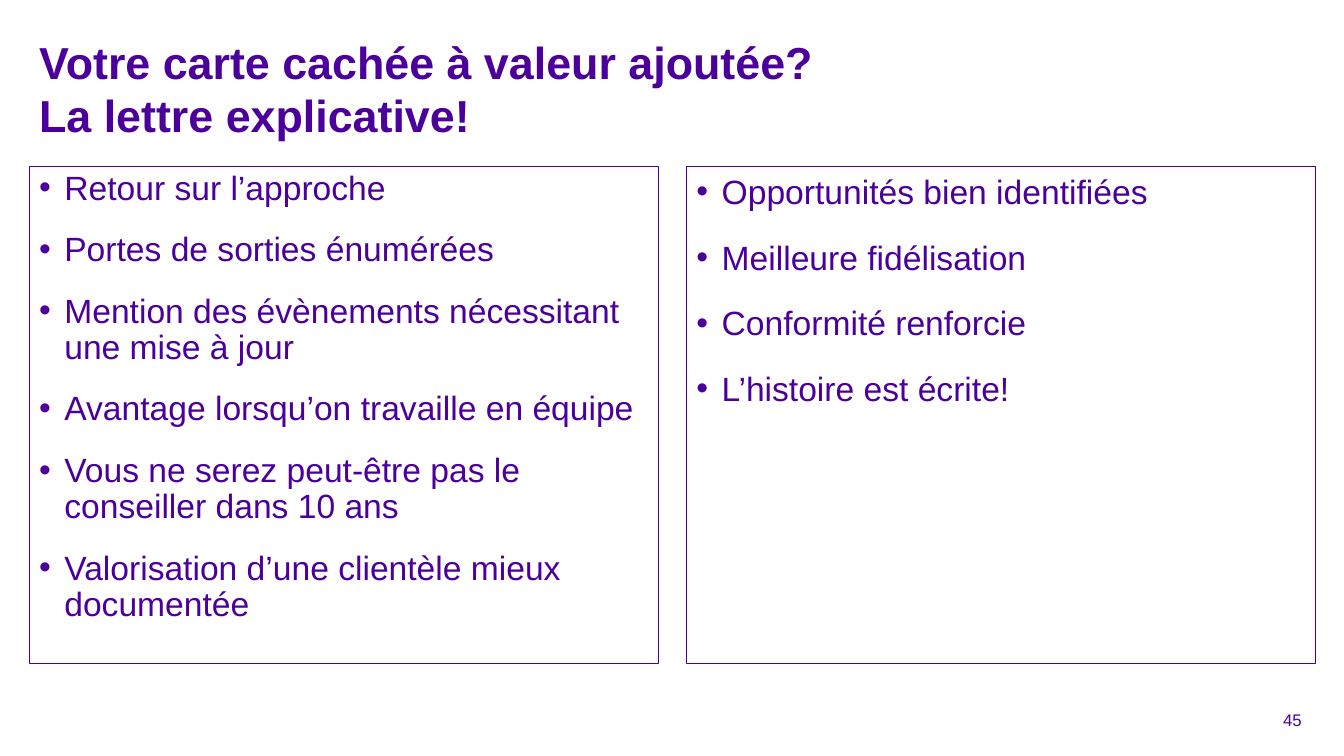
from dataclasses import dataclass

from lxml import etree
from pptx import Presentation
from pptx.dml.color import RGBColor
from pptx.enum.shapes import MSO_SHAPE
from pptx.enum.text import MSO_ANCHOR, PP_ALIGN
from pptx.oxml.ns import qn
from pptx.util import Inches, Pt

RECT = MSO_SHAPE.RECTANGLE
TOP, MIDDLE = MSO_ANCHOR.TOP, MSO_ANCHOR.MIDDLE
LEFT, RIGHT = PP_ALIGN.LEFT, PP_ALIGN.RIGHT

WIDE, HIGH = 13.33, 7.5
EDGE, GAP, COLS = 0.29, 0.28, 2
SPAN = WIDE - 0.28 - EDGE
COL = (SPAN - GAP * (COLS - 1)) / COLS

TITLE = "Votre carte cachée à valeur ajoutée?\vLa lettre explicative!"
LISTS = (
    ((
        "Retour sur l’approche",
        "Portes de sorties énumérées",
        "Mention des évènements nécessitant une mise à jour",
        "Avantage lorsqu’on travaille en équipe",
        "Vous ne serez peut-être pas le conseiller dans 10 ans",
        "Valorisation d’une clientèle mieux documentée",
    ), 0.9),
    ((
        "Opportunités bien identifiées",
        "Meilleure fidélisation",
        "Conformité renforcie",
        "L’histoire est écrite!",
    ), None),
)


@dataclass(frozen=True)
class Theme:
    """Hold the colours and type sizes."""
    ink: RGBColor = RGBColor(0x4B, 0x00, 0x9B)
    page: RGBColor = RGBColor(0xFF, 0xFF, 0xFF)
    font: str = "Arial"
    title: int = 32
    body: int = 24
    small: int = 12
    line: float = 0.75


THEME = Theme()


def mark(para):
    """Give a paragraph a hanging bullet."""
    props = para._p.get_or_add_pPr()
    props.set("marL", str(Inches(0.25)))
    props.set("indent", str(-Inches(0.25)))
    tint = etree.SubElement(props, qn("a:buClr"))
    etree.SubElement(tint, qn("a:srgbClr"), val=str(THEME.ink))
    etree.SubElement(props, qn("a:buFont"), typeface=THEME.font)
    etree.SubElement(props, qn("a:buChar"), char="•")


def write(frame, *lines, size, bold=False, align=LEFT, anchor=TOP,
          pitch=None, before=0, bullet=False, wrap=True):
    """Fill a text frame with formatted paragraphs."""
    frame.word_wrap = wrap
    frame.vertical_anchor = anchor
    for num, line in enumerate(lines):
        para = frame.add_paragraph() if num else frame.paragraphs[0]
        para.text = line
        if bullet:
            mark(para)
        para.alignment = align
        para.line_spacing = pitch
        para.space_before = Pt(before if num else 0)
        para.font.size = Pt(size)
        para.font.bold = bold
        para.font.name = THEME.font
        para.font.color.rgb = THEME.ink


def label(slide, box, text, **style):
    """Add a plain text box and return its frame."""
    frame = slide.shapes.add_textbox(*map(Inches, box)).text_frame
    write(frame, text, **style)
    return frame


def panel(slide, box, lines, pitch):
    """Add an outlined box with a bullet list."""
    shape = slide.shapes.add_shape(RECT, *map(Inches, box))
    shape.shadow.inherit = False
    shape.fill.background()
    shape.line.color.rgb = THEME.ink
    shape.line.width = Pt(THEME.line)
    write(shape.text_frame, *lines, size=THEME.body, pitch=pitch,
          before=18, bullet=True)


def main():
    """Build the slide and save it."""
    deck = Presentation()
    deck.slide_width, deck.slide_height = Inches(WIDE), Inches(HIGH)
    slide = deck.slides.add_slide(deck.slide_layouts[6])
    slide.background.fill.solid()
    slide.background.fill.fore_color.rgb = THEME.page

    label(slide, (EDGE, EDGE, SPAN, 1.28), TITLE, size=THEME.title, bold=True)
    for num, (lines, pitch) in enumerate(LISTS):
        left = EDGE + num * (COL + GAP)
        panel(slide, (left, HIGH * 0.22, COL, 4.93), lines, pitch)

    frame = label(slide, (12.49, 7.02, 0.52, 0.26), "45", size=THEME.small,
                  align=RIGHT, anchor=MIDDLE, pitch=0.9, wrap=False)
    frame.margin_left = frame.margin_top = frame.margin_bottom = 0
    frame.margin_right = Inches(0.1)
    deck.save("out.pptx")


if __name__ == "__main__":
    main()
